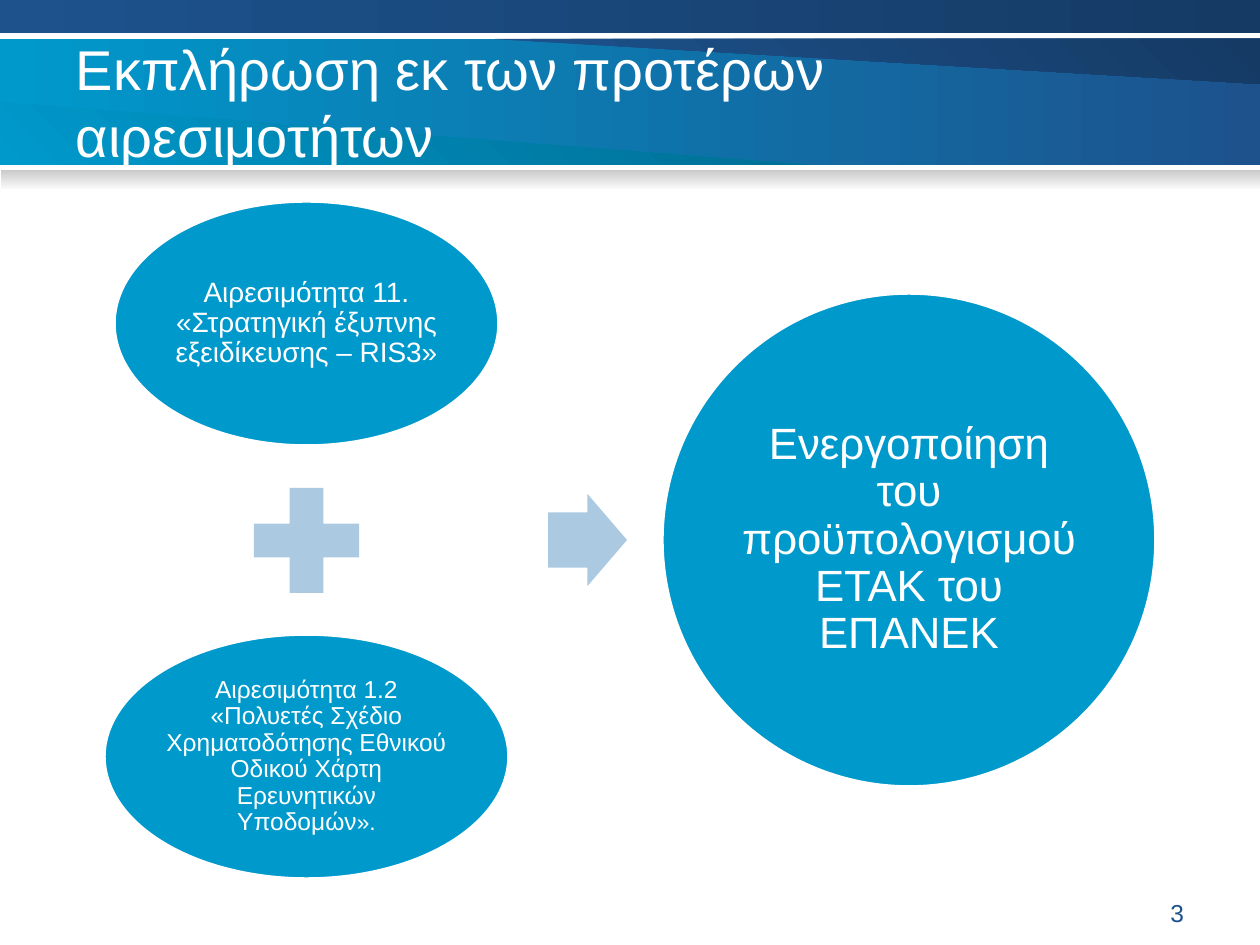
from pptx import Presentation
from pptx.dml.color import RGBColor
from pptx.enum.shapes import MSO_SHAPE
from pptx.enum.text import MSO_ANCHOR, PP_ALIGN
from pptx.util import Pt

EMU_PER_PX = 914400 / 126
COLORS = {"white": "FFFFFF", "cyan": "0099CC", "teal": "006D92", "blue": "1D528D",
          "navy": "153B65", "pale": "ABCAE2", "gray": "CACACA"}

# Content: boxes are left, top, width, height in px
TITLE = "Εκπλήρωση εκ των προτέρων αιρεσιμοτήτων"
PAGE_NUMBER = "3"
BANDS = [  # box, gradient colours, gradient angle
    ((0, 39, 1261, 126), ("cyan", "blue"), 0),
    ((0, 0, 1260, 33), ("blue", "navy"), 0),
    ((1, 170, 1259, 21), ("gray", "white"), 270),
]
WEDGES = [  # outline, gradient colours
    ([(1237, 39), (495, 39), (1260, 84), (1260, 39)], ("blue", "navy")),
    ([(24, 165), (810, 165), (0, 102), (0, 165)], ("cyan", "teal")),
]
ELLIPSES = [  # box, inset, runs of (text, size)
    ((114, 201, 385, 245), 3,
     [("Αιρεσιμότητα 11. «Στρατηγική έξυπνης εξειδίκευσης – RIS3»", 16)]),
    ((104, 634, 405, 245), 3,
     [("Αιρεσιμότητα 1.2 «Πολυετές Σχέδιο Χρηματοδότησης Εθνικού Οδικού Χάρτη "
       "Ερευνητικών Υποδομών", 14), ("».", 13)]),
    ((662, 293, 494, 494), 4,
     [("Ενεργοποίηση του προϋπολογισμού ΕΤΑΚ του ΕΠΑΝΕΚ", 25)]),
]
SIGNS = [  # preset, box, adjustments
    (MSO_SHAPE.MATH_PLUS, (235, 469, 143, 143), ()),
    (MSO_SHAPE.RIGHT_ARROW, (548, 494, 79, 92), (0.6, 0.5)),
]


def px(value):
    return round(value * EMU_PER_PX)


def color(name):
    return RGBColor.from_string(COLORS[name])


def fill_gradient(shape, names, angle):
    shape.shadow.inherit = False
    shape.line.fill.background()
    shape.fill.gradient()
    shape.fill.gradient_angle = angle
    for stop, name in zip(shape.fill.gradient_stops, names):
        stop.color.rgb = color(name)


def add_shape(preset, box, fill):
    shape = page.shapes.add_shape(preset, *map(px, box))
    shape.shadow.inherit = False
    shape.fill.solid()
    shape.fill.fore_color.rgb = color(fill)
    shape.line.fill.background()
    return shape


def write(shape, runs, ink="white", align=PP_ALIGN.LEFT, anchor=MSO_ANCHOR.MIDDLE,
          insets=(13, 6, 13, 6), spacing=1.0):
    frame = shape.text_frame
    frame.word_wrap = True
    frame.vertical_anchor = anchor
    (frame.margin_left, frame.margin_top,
     frame.margin_right, frame.margin_bottom) = map(px, insets)
    para = frame.paragraphs[0]
    para.alignment = align
    para.line_spacing = spacing
    for text, size in runs:
        span = para.add_run()
        span.text = text
        span.font.name = "Arial"
        span.font.size = Pt(size)
        span.font.color.rgb = color(ink)


deck = Presentation()
deck.slide_width, deck.slide_height = px(1260), px(945)
page = deck.slides.add_slide(deck.slide_layouts[6])

# Header: title band, its two wedges, top strip and soft shadow
header, *strips = BANDS


def add_band(box, names, angle):
    band = page.shapes.add_shape(MSO_SHAPE.RECTANGLE, *map(px, box))
    fill_gradient(band, names, angle)


add_band(*header)
for outline, names in WEDGES:
    builder = page.shapes.build_freeform(*outline[0], scale=EMU_PER_PX)
    builder.add_line_segments(outline[1:], close=True)
    fill_gradient(builder.convert_to_shape(), names, 45)
for strip in strips:
    add_band(*strip)

# Title
title_box = page.shapes.add_textbox(*map(px, (63, 26, 1134, 138)))
write(title_box, [(TITLE, 32)], insets=(13, 14, 13, 0))

# Two conditions leading to the result
for box, inset, runs in ELLIPSES:
    ellipse = add_shape(MSO_SHAPE.OVAL, box, "cyan")
    ellipse.line.color.rgb = color("white")
    ellipse.line.width = Pt(2)
    write(ellipse, runs, align=PP_ALIGN.CENTER, insets=(inset,) * 4, spacing=0.9)

# Plus sign and arrow
for preset, box, adjustments in SIGNS:
    sign = add_shape(preset, box, "pale")
    for index, value in enumerate(adjustments):
        sign.adjustments[index] = value

# Page number
number_box = page.shapes.add_textbox(*map(px, (903, 892, 294, 34)))
write(number_box, [(PAGE_NUMBER, 14)], ink="blue", align=PP_ALIGN.RIGHT,
      anchor=MSO_ANCHOR.TOP)

deck.save("out.pptx")
